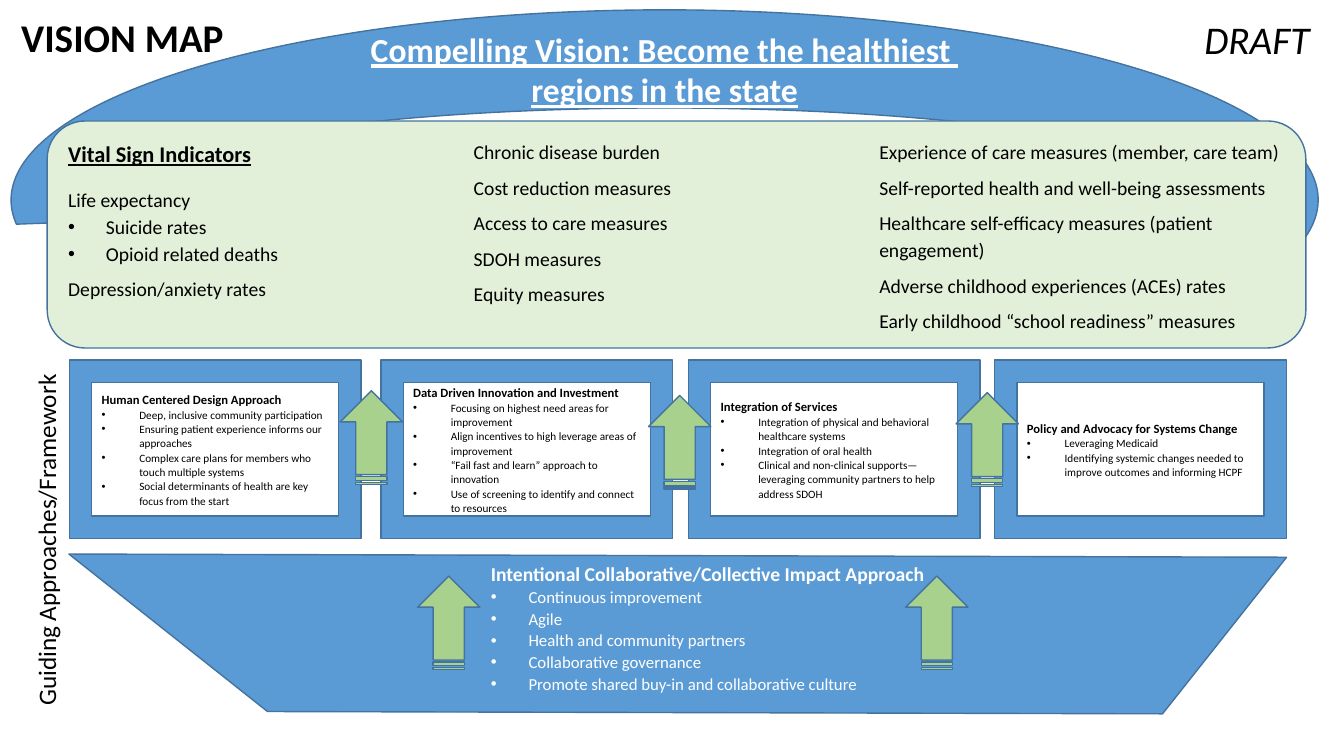
from dataclasses import dataclass

from lxml import etree
from pptx import Presentation
from pptx.dml.color import RGBColor
from pptx.enum.shapes import MSO_SHAPE
from pptx.enum.text import MSO_ANCHOR, MSO_AUTO_SIZE, PP_ALIGN
from pptx.oxml.ns import qn
from pptx.util import Cm, Pt

LEFT, CENTER, RIGHT = PP_ALIGN.LEFT, PP_ALIGN.CENTER, PP_ALIGN.RIGHT
TOP, MIDDLE = MSO_ANCHOR.TOP, MSO_ANCHOR.MIDDLE
NO_AUTOFIT = MSO_AUTO_SIZE.NONE
STRIPE, FRAME, ARC = MSO_SHAPE.DIAGONAL_STRIPE, MSO_SHAPE.FRAME, MSO_SHAPE.BLOCK_ARC
ROUNDED, ARROW = MSO_SHAPE.ROUNDED_RECTANGLE, MSO_SHAPE.STRIPED_RIGHT_ARROW

FONT = "Calibri"
BLUE, OUTLINE, GREEN, PALE_GREEN = "5B9BD5", "43739E", "A9D18E", "E2F0D9"
BLACK, WHITE = "000000", "FFFFFF"
BULLET_INDENT = Cm(0.95)


@dataclass(frozen=True)
class Box:
    left: float
    top: float
    width: float
    height: float

    def lengths(self) -> tuple:
        return Cm(self.left), Cm(self.top), Cm(self.width), Cm(self.height)


@dataclass(frozen=True)
class Line:
    text: str
    size: float
    color: str = BLACK
    bold: bool = False
    italic: bool = False
    underline: bool = False
    bullet: bool = False
    align: int = LEFT
    spacing: float = 1.0
    before: float = 0
    after: float = 0


@dataclass(frozen=True)
class Approach:
    left: float
    heading: str
    points: tuple


APPROACHES = (
    Approach(1.75, "Human Centered Design Approach", (
        "Deep, inclusive community participation",
        "Ensuring patient experience informs our approaches",
        "Complex care plans for members who touch multiple systems",
        "Social determinants of health are key focus from the start")),
    Approach(9.6, "Data Driven Innovation and Investment", (
        "Focusing on highest need areas for improvement",
        "Align incentives to high leverage areas of improvement",
        "“Fail fast and learn” approach to innovation",
        "Use of screening to identify and connect to resources")),
    Approach(17.35, "Integration of Services", (
        "Integration of physical and behavioral healthcare systems",
        "Integration of oral health",
        "Clinical and non-clinical supports—leveraging community partners "
        "to help address SDOH")),
    Approach(25.07, "Policy and Advocacy for Systems Change", (
        "Leveraging Medicaid",
        "Identifying systemic changes needed to improve outcomes and informing HCPF")),
)
COLLABORATION = (
    "Continuous improvement", "Agile", "Health and community partners",
    "Collaborative governance", "Promote shared buy-in and collaborative culture")
MEASURES = (
    "Depression/anxiety rates", "Chronic disease burden", "Cost reduction measures",
    "Access to care measures", "SDOH measures", "Equity measures",
    "Experience of care measures (member, care team)",
    "Self-reported health and well-being assessments",
    "Healthcare self-efficacy measures (patient engagement)",
    "Adverse childhood experiences (ACEs) rates",
    "Early childhood “school readiness” measures")
INDICATORS = [
    Line("Vital Sign Indicators", 16, bold=True, underline=True, spacing=1.15, before=12),
    Line("Life expectancy", 14, spacing=1.15, before=12),
    Line("Suicide rates", 14, bullet=True, spacing=1.15),
    Line("Opioid related deaths", 14, bullet=True, spacing=1.15, after=6),
    *(Line(measure, 14, spacing=1.15, after=6) for measure in MEASURES),
]
VISION = [Line(text, 24, WHITE, bold=True, underline=True, align=CENTER) for text in
          ("Compelling Vision: Become the healthiest ", "regions in the state")]
ARROW_CORNERS = ((8.18, 10.24), (15.95, 10.36), (23.7, 10.29), (10.13, 14.91), (22.43, 14.91))


def rgb(color: str) -> RGBColor:
    return RGBColor.from_string(color)


def bulleted(heading: str, points: tuple, sizes: tuple, color: str) -> list:
    """Return a bold heading followed by bullet lines."""
    return [Line(heading, sizes[0], color, bold=True, spacing=1.07),
            *(Line(point, sizes[1], color, bullet=True, spacing=1.07) for point in points)]


def add_bullet(para) -> None:
    properties = para._p.get_or_add_pPr()
    properties.set("marL", str(BULLET_INDENT))
    properties.set("indent", str(-BULLET_INDENT))
    etree.SubElement(properties, qn("a:buFont"), typeface="Arial")
    etree.SubElement(properties, qn("a:buChar"), char="•")


def write(shape, lines: list, anchor: int) -> None:
    frame = shape.text_frame
    frame.word_wrap = True
    frame.auto_size = NO_AUTOFIT
    frame.vertical_anchor = anchor
    for index, line in enumerate(lines):
        para = frame.add_paragraph() if index else frame.paragraphs[0]
        para.alignment = line.align
        para.line_spacing = line.spacing
        para.space_before, para.space_after = Pt(line.before), Pt(line.after)
        if line.bullet:
            add_bullet(para)
        span = para.add_run()
        span.text = line.text
        font = span.font
        font.name, font.size = FONT, Pt(line.size)
        font.bold, font.italic, font.underline = line.bold, line.italic, line.underline
        font.color.rgb = rgb(line.color)


def add_figure(page, kind: int, box: Box, fill: str, adjustments: tuple = (),
               rotation: float = 0):
    shape = page.shapes.add_shape(kind, *box.lengths())
    shape.shadow.inherit = False
    shape.fill.solid()
    shape.fill.fore_color.rgb = rgb(fill)
    shape.line.color.rgb = rgb(OUTLINE)
    shape.line.width = Pt(1)
    shape.rotation = rotation
    for index, value in enumerate(adjustments):
        shape.adjustments[index] = value
    return shape


def add_label(page, box: Box, lines: list, rotation: float = 0) -> None:
    label = page.shapes.add_textbox(*box.lengths())
    label.rotation = rotation
    write(label, lines, TOP)


def main() -> None:
    deck = Presentation()
    deck.slide_width, deck.slide_height = Cm(33.87), Cm(19.05)
    page = deck.slides.add_slide(deck.slide_layouts[5])

    title = page.shapes.title
    title.left, title.top, title.width, title.height = Box(0.28, 0.2, 7.11, 1.45).lengths()
    write(title, [Line("VISION MAP", 28, bold=True)], TOP)

    add_figure(page, STRIPE, Box(5.03, 4.5, 24.1, 19), BLUE, (0.735,), 218.4)
    for approach in APPROACHES:
        frame = add_figure(page, FRAME, Box(approach.left, 9.07, 7.35, 4.5), BLUE)
        write(frame, bulleted(approach.heading, approach.points, (9, 8), BLACK), MIDDLE)

    arc = add_figure(page, ARC, Box(0.28, 0.25, 32.94, 9.58), BLUE, (106.715, 2.049, 0.258))
    write(arc, VISION, MIDDLE)
    arc.text_frame.margin_bottom = Cm(2.88)

    panel = add_figure(page, ROUNDED, Box(1.19, 3.05, 31.72, 5.72), PALE_GREEN)
    write(panel, INDICATORS, MIDDLE)
    panel.text_frame._txBody.bodyPr.set("numCol", "3")

    add_label(page, Box(12.12, 14, 11.48, 3.63), bulleted(
        "Intentional Collaborative/Collective Impact Approach", COLLABORATION, (14, 12), WHITE))
    for left, top in ARROW_CORNERS:
        add_figure(page, ARROW, Box(left, top, 2.36, 1.57), GREEN, rotation=270)
    add_label(page, Box(-4.04, 12.32, 10.41, 1.02),
              [Line("Guiding Approaches/Framework", 18)], 270)
    add_label(page, Box(28.75, 0.25, 4.5, 1.45), [Line("DRAFT", 28, italic=True, align=RIGHT)])
    deck.save("out.pptx")


if __name__ == "__main__":
    main()
